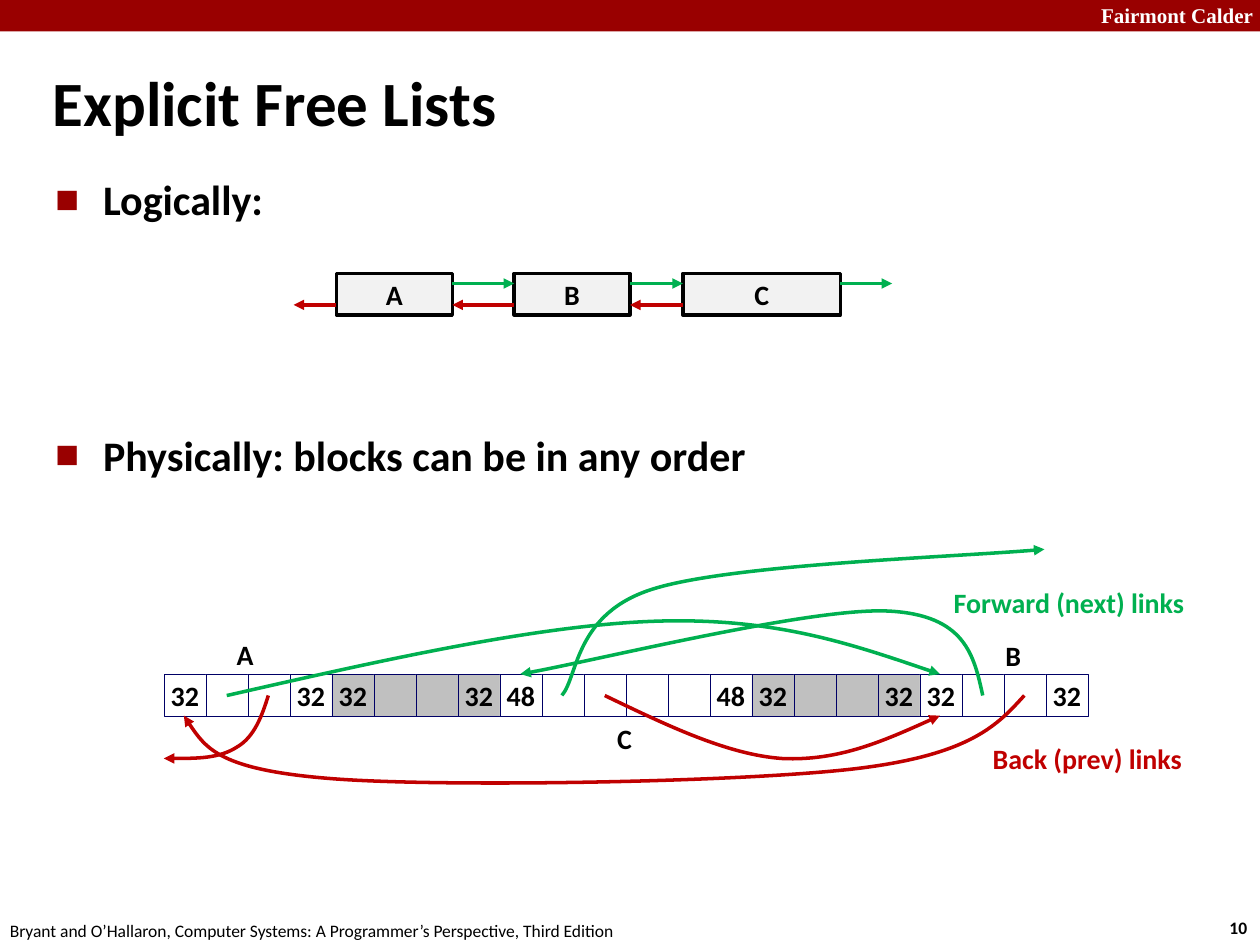
"""Build the slide on explicit free lists, with logical and physical views."""
from lxml import etree
from pptx import Presentation
from pptx.dml.color import RGBColor
from pptx.enum.shapes import MSO_CONNECTOR, MSO_SHAPE
from pptx.enum.text import MSO_ANCHOR, PP_ALIGN
from pptx.oxml.ns import qn
from pptx.util import Inches, Pt

RECT = MSO_SHAPE.RECTANGLE
LINE = MSO_CONNECTOR.STRAIGHT
MID = MSO_ANCHOR.MIDDLE
CENTER = PP_ALIGN.CENTER

COLORS = {"bar": "990000", "next": "00B050", "prev": "C00000", "black": "000000",
          "white": "FFFFFF", "node": "F2F2F2", "used": "C0C0C0", "edge": "000066"}

TITLE = "Explicit Free Lists"
POINTS = [("Logically:", 4.8), ("Physically: blocks can be in any order", 121.5)]
BOOK = "Bryant and O’Hallaron, Computer Systems: A Programmer’s Perspective, Third Edition"

NODES = [("A", 2.67, 0.92), ("B", 4.08, 0.92), ("C", 5.42, 1.25)]
ENDS = (2.33, 7.08)
NODE_TOP, NODE_H = 2.17, 0.33
NEXT_Y, PREV_Y = 2.25, 2.42

BLOCKS = [("32", 4, "white"), ("32", 4, "used"), ("48", 6, "white"),
          ("32", 4, "used"), ("32", 4, "white")]
ROW_X, ROW_Y, CELL = 1.3, 5.35, 1 / 3

CURVES = [
    ("next", [(1.8, 5.52), (3.03, 5.24), (4.27, 4.96), (5.21, 4.93),
              (6.16, 4.9), (6.81, 5.13), (7.46, 5.35)]),
    ("next", [(7.8, 5.52), (7.73, 5.2), (7.66, 4.88), (7.05, 4.85),
              (6.44, 4.82), (4.62, 5.27), (4.13, 5.35)]),
    ("prev", [(8.13, 5.52), (7.92, 5.75), (7.71, 5.99), (6.8, 6.1), (5.88, 6.21),
              (3.52, 6.25), (2.63, 6.18), (1.74, 6.11), (1.6, 5.9), (1.46, 5.68)]),
    ("prev", [(4.8, 5.52), (5.28, 5.75), (5.77, 5.99), (6.21, 6.02),
              (6.66, 6.04), (7.06, 5.86), (7.46, 5.68)]),
    ("next", [(4.46, 5.52), (4.59, 5.37), (4.56, 4.86), (5.2, 4.67),
              (5.83, 4.48), (7.64, 4.42), (8.29, 4.36)]),
    ("prev", [(2.13, 5.52), (2.08, 5.68), (2.02, 5.85), (1.88, 5.93),
              (1.74, 6.02), (1.52, 6.02), (1.3, 6.02)]),
]
LABELS = [("Forward (next) links", 7.47, 4.6, 2.05, "next"),
          ("Back (prev) links", 7.78, 5.84, 1.72, "prev"),
          ("A", 1.78, 5.01, 0.34, "black"),
          ("B", 7.88, 5.02, 0.32, "black"),
          ("C", 4.8, 5.68, 0.32, "black")]


def color(name):
    return RGBColor.from_string(COLORS[name])


def style(para, size, tint="black", bold=True, face="Calibri"):
    for run in para.runs:
        font = run.font
        font.size, font.bold, font.name = Pt(size), bold, face
        font.color.rgb = color(tint)


def add_text(slide, text, box, size, tint="black", bold=True, face="Calibri", wrap=False):
    frame = slide.shapes.add_textbox(*map(Inches, box)).text_frame
    frame.word_wrap = wrap
    frame.text = text
    style(frame.paragraphs[0], size, tint, bold, face)
    return frame


def add_box(slide, box, fill, edge=None, width=0, text=""):
    shape = slide.shapes.add_shape(RECT, *map(Inches, box))
    shape.shadow.inherit = False
    shape.fill.solid()
    shape.fill.fore_color.rgb = color(fill)
    if edge:
        shape.line.color.rgb = color(edge)
        shape.line.width = Pt(width)
    else:
        shape.line.fill.background()
    if text:
        frame = shape.text_frame
        frame.word_wrap = False
        frame.vertical_anchor = MID
        frame.text = text
        frame.paragraphs[0].alignment = CENTER
        style(frame.paragraphs[0], 16)


def set_arrow(shape, tint):
    shape.line.color.rgb = color(tint)
    shape.line.width = Pt(2)
    etree.SubElement(shape.line._get_or_add_ln(), qn("a:tailEnd"), type="triangle")


def add_arrow(slide, start, end, y, tint):
    line = slide.shapes.add_connector(LINE, Inches(start), Inches(y), Inches(end), Inches(y))
    set_arrow(line, tint)
    etree.SubElement(line._element.spPr, qn("a:effectLst"))


def add_curve(slide, tint, points):
    start, *rest = [(Inches(x), Inches(y)) for x, y in points]
    pen = slide.shapes.build_freeform(*start, scale=1.0)
    pen.add_line_segments(rest, close=False)
    shape = pen.convert_to_shape()
    shape.shadow.inherit = False
    shape.fill.background()
    set_arrow(shape, tint)
    steps = list(shape._element.iter(qn("a:lnTo")))
    for i in range(0, len(steps), 3):
        trio = steps[i:i + 3]
        bend = etree.Element(qn("a:cubicBezTo"))
        trio[0].addprevious(bend)
        for step in trio:
            bend.append(step[0])
            step.getparent().remove(step)


def add_bullet(para):
    props = para._p.get_or_add_pPr()
    props.set("marL", str(Inches(0.38)))
    props.set("indent", str(-Inches(0.38)))
    tint = etree.SubElement(props, qn("a:buClr"))
    etree.SubElement(tint, qn("a:srgbClr"), val=COLORS["bar"])
    etree.SubElement(props, qn("a:buSzPct"), val="60000")
    etree.SubElement(props, qn("a:buFont"), typeface="Calibri")
    etree.SubElement(props, qn("a:buChar"), char="■")


def add_frame(slide):
    add_box(slide, (0, 0, 10, 0.25), "bar")
    add_text(slide, "Fairmont Calder", (8.64, -0.03, 1.43, 0.3), 12, "white",
             face="Times New Roman")
    add_text(slide, "10", (9.66, 7.23, 0.37, 0.27), 10)
    add_text(slide, BOOK, (-0.02, 7.25, 5.08, 0.27), 10, bold=False)
    head = add_text(slide, TITLE, (0.32, 0.53, 6.64, 0.63), 36, wrap=True)
    head.vertical_anchor = MID
    head.paragraphs[0].line_spacing = 0.87
    body = add_text(slide, "\n".join(text for text, _ in POINTS),
                    (0.34, 1.39, 9.09, 2.66), 24, wrap=True)
    for para, (_, gap) in zip(body.paragraphs, POINTS):
        para.line_spacing = 0.85
        para.space_before = Pt(gap)
        add_bullet(para)
        style(para, 24)


def add_logic(slide):
    for name, left, width in NODES:
        add_box(slide, (left, NODE_TOP, width, NODE_H), "node", "black", 2, name)
    lefts = [left for _, left, _ in NODES]
    rights = [left + width for _, left, width in NODES]
    for start, end in zip(rights, lefts[1:] + [ENDS[1]]):
        add_arrow(slide, start, end, NEXT_Y, "next")
    for start, end in zip(lefts, [ENDS[0]] + rights[:-1]):
        add_arrow(slide, start, end, PREV_Y, "prev")


def add_memory(slide):
    cells = [(size if i in (0, count - 1) else "", fill)
             for size, count, fill in BLOCKS for i in range(count)]
    for i, (text, fill) in enumerate(cells):
        add_box(slide, (ROW_X + i * CELL, ROW_Y, CELL, CELL), fill, "edge", 0.25, text)
    for tint, points in CURVES:
        add_curve(slide, tint, points)
    for text, left, top, width, tint in LABELS:
        add_text(slide, text, (left, top, width, 0.37), 16, tint)


def main():
    deck = Presentation()
    deck.slide_width, deck.slide_height = Inches(10), Inches(7.5)
    slide = deck.slides.add_slide(deck.slide_layouts[6])
    add_frame(slide)
    add_logic(slide)
    add_memory(slide)
    deck.save("out.pptx")


if __name__ == "__main__":
    main()
